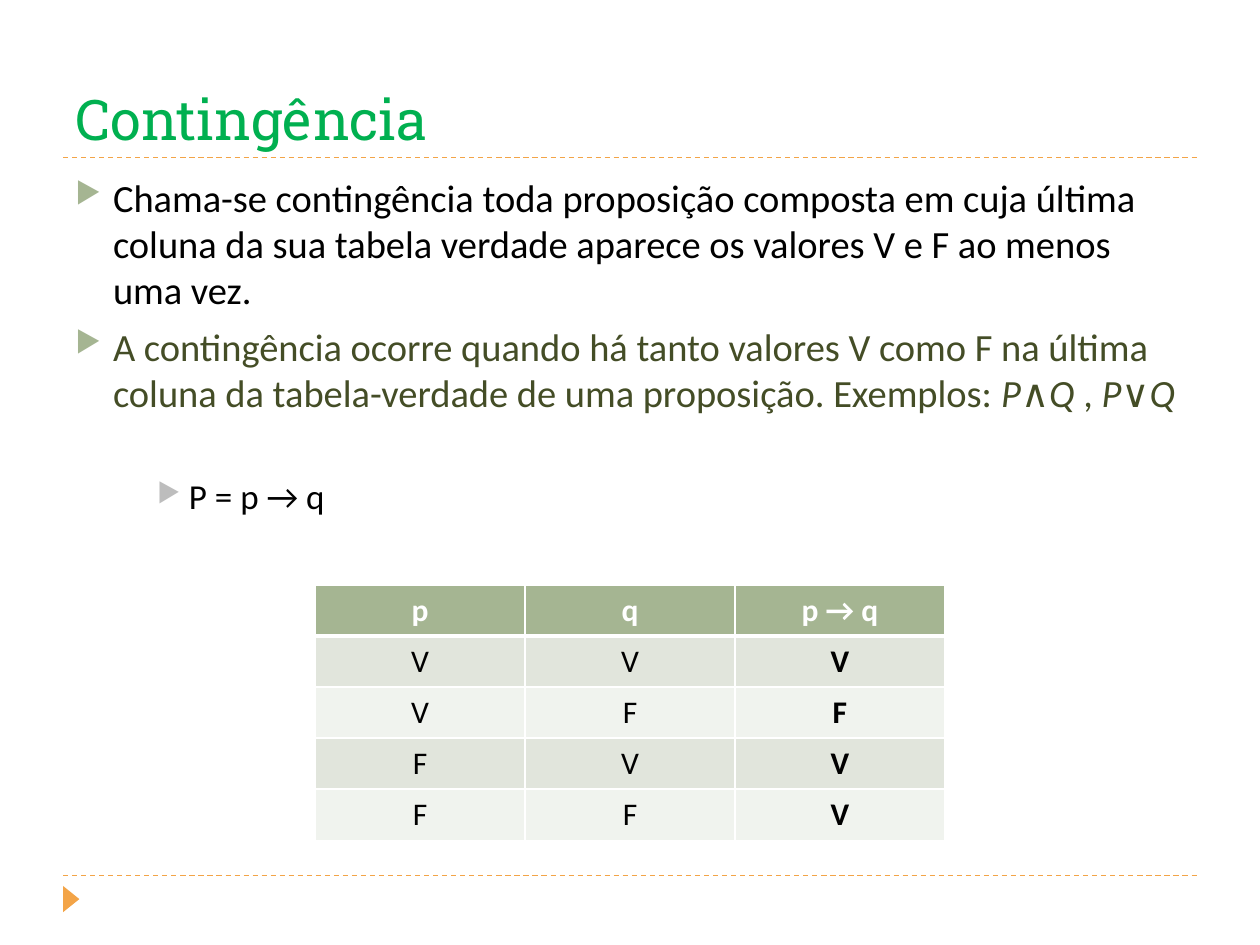
from lxml import etree
from pptx import Presentation
from pptx.dml.color import RGBColor
from pptx.enum.dml import MSO_LINE
from pptx.enum.shapes import MSO_CONNECTOR, MSO_SHAPE
from pptx.enum.text import MSO_ANCHOR, PP_ALIGN
from pptx.oxml.ns import qn
from pptx.util import Cm, Pt

BOTTOM, MIDDLE = MSO_ANCHOR.BOTTOM, MSO_ANCHOR.MIDDLE
CENTER, JUSTIFY, LEFT = PP_ALIGN.CENTER, PP_ALIGN.JUSTIFY, PP_ALIGN.LEFT
DASH, STRAIGHT = MSO_LINE.DASH, MSO_CONNECTOR.STRAIGHT
TRIANGLE = MSO_SHAPE.ISOSCELES_TRIANGLE

ORANGE = RGBColor(0xF3, 0xA4, 0x47)
GREEN = RGBColor(0x00, 0xB0, 0x50)
SAGE = RGBColor(0xA5, 0xB5, 0x92)
GRAY = RGBColor(0xBD, 0xBD, 0xBD)
OLIVE = RGBColor(0x44, 0x4D, 0x26)
BLACK = RGBColor(0x00, 0x00, 0x00)
WHITE = RGBColor(0xFF, 0xFF, 0xFF)
BAND_DARK = RGBColor(0xE1, 0xE5, 0xDC)
BAND_LIGHT = RGBColor(0xF0, 0xF3, 0xEE)

TITLE_FONT = "Roboto Slab"
BODY_FONT = "Calibri"

DEFINITION = (
    "Chama-se contingência toda proposição composta em cuja última coluna "
    "da sua tabela verdade aparece os valores V e F ao menos uma vez."
)
OCCURRENCE = (
    "A contingência ocorre quando há tanto valores V como F na última coluna "
    "da tabela-verdade de uma proposição. Exemplos: "
)
BULLETS = [
    ([(DEFINITION, False)], BLACK, 22, SAGE, 0.76, 0.76, 0, LEFT),
    ([(OCCURRENCE, False), ("P∧Q ", True), (", ", False), ("P∨Q", True)],
     OLIVE, 22, SAGE, 0.76, 0.76, 6, LEFT),
    ([("P = p → q", False)], BLACK, 20, GRAY, 2.29, 0.64, 34, JUSTIFY),
]
TRUTH_TABLE = [
    ("p", "q", "p → q"),
    ("V", "V", "V"),
    ("V", "F", "F"),
    ("F", "V", "V"),
    ("F", "F", "V"),
]


def style_run(r, font, size, color, bold=False, italic=False):
    r.font.name = font
    r.font.size = Pt(size)
    r.font.color.rgb = color
    r.font.bold = bold
    r.font.italic = italic


def add_bullet(p, color, margin, hang):
    pPr = p._p.get_or_add_pPr()
    pPr.set("marL", str(Cm(margin)))
    pPr.set("indent", str(-Cm(hang)))
    clr = etree.SubElement(pPr, qn("a:buClr"))
    etree.SubElement(clr, qn("a:srgbClr"), val=str(color))
    etree.SubElement(pPr, qn("a:buSzPct"), val="76000")
    etree.SubElement(pPr, qn("a:buChar"), char="▶")


def add_borders(cell, bottom, top):
    tcPr = cell._tc.get_or_add_tcPr()
    for side, width in (("L", 1), ("R", 1), ("T", top), ("B", bottom)):
        ln = etree.SubElement(tcPr, qn(f"a:ln{side}"), w=str(Pt(width)))
        fill = etree.SubElement(ln, qn("a:solidFill"))
        etree.SubElement(fill, qn("a:srgbClr"), val=str(WHITE))


def add_frame(s, x, y, w, h):
    for line_y in (y, y + h):
        line = s.shapes.add_connector(STRAIGHT, Cm(x), Cm(line_y), Cm(x + w), Cm(line_y))
        line.line.color.rgb = ORANGE
        line.line.width = Pt(0.75)
        line.line.dash_style = DASH
        etree.SubElement(line._element.spPr, qn("a:effectLst"))
    sp = s.shapes.add_shape(TRIANGLE, Cm(x - 0.1), Cm(y + h + 0.31), Cm(0.53), Cm(0.33))
    sp.rotation = 90
    sp.shadow.inherit = False
    sp.fill.solid()
    sp.fill.fore_color.rgb = ORANGE
    sp.line.fill.background()


def add_title(s, x, y, w, h):
    tf = s.shapes.add_textbox(Cm(x), Cm(y), Cm(w), Cm(h)).text_frame
    tf.word_wrap = True
    tf.vertical_anchor = BOTTOM
    tf.text = "Contingência"
    style_run(tf.paragraphs[0].runs[0], TITLE_FONT, 32, GREEN)


def add_body(s, x, y, w, h):
    tf = s.shapes.add_textbox(Cm(x), Cm(y), Cm(w), Cm(h)).text_frame
    tf.word_wrap = True
    for i, (runs, color, size, mark, margin, hang, before, align) in enumerate(BULLETS):
        p = tf.add_paragraph() if i else tf.paragraphs[0]
        add_bullet(p, mark, margin, hang)
        p.space_before = Pt(before)
        p.alignment = align
        for text, italic in runs:
            r = p.add_run()
            r.text = text
            style_run(r, BODY_FONT, size, color, italic=italic)


def add_truth_table(s, x, y, w, h):
    rows, cols = len(TRUTH_TABLE), len(TRUTH_TABLE[0])
    table = s.shapes.add_table(rows, cols, Cm(x), Cm(y), Cm(w), Cm(h)).table
    for i, values in enumerate(TRUTH_TABLE):
        header = i == 0
        fill = SAGE if header else (BAND_DARK if i % 2 else BAND_LIGHT)
        for j, value in enumerate(values):
            cell = table.cell(i, j)
            add_borders(cell, bottom=3 if header else 1, top=3 if i == 1 else 1)
            cell.fill.solid()
            cell.fill.fore_color.rgb = fill
            cell.vertical_anchor = MIDDLE
            p = cell.text_frame.paragraphs[0]
            p.text = value
            p.alignment = CENTER
            style_run(p.runs[0], BODY_FONT, 18, WHITE if header else BLACK,
                      bold=header or j == cols - 1)


def main():
    prs = Presentation()
    prs.slide_width, prs.slide_height = Cm(25.4), Cm(19.05)
    s = prs.slides.add_slide(prs.slide_layouts[6])
    add_frame(s, 1.27, 3.18, 22.86, 14.47)
    add_title(s, 1.27, 0.43, 22.86, 2.75)
    add_body(s, 1.27, 3.38, 22.86, 13.72)
    add_truth_table(s, 6.35, 11.79, 12.7, 5.15)
    prs.save("out.pptx")


if __name__ == "__main__":
    main()
